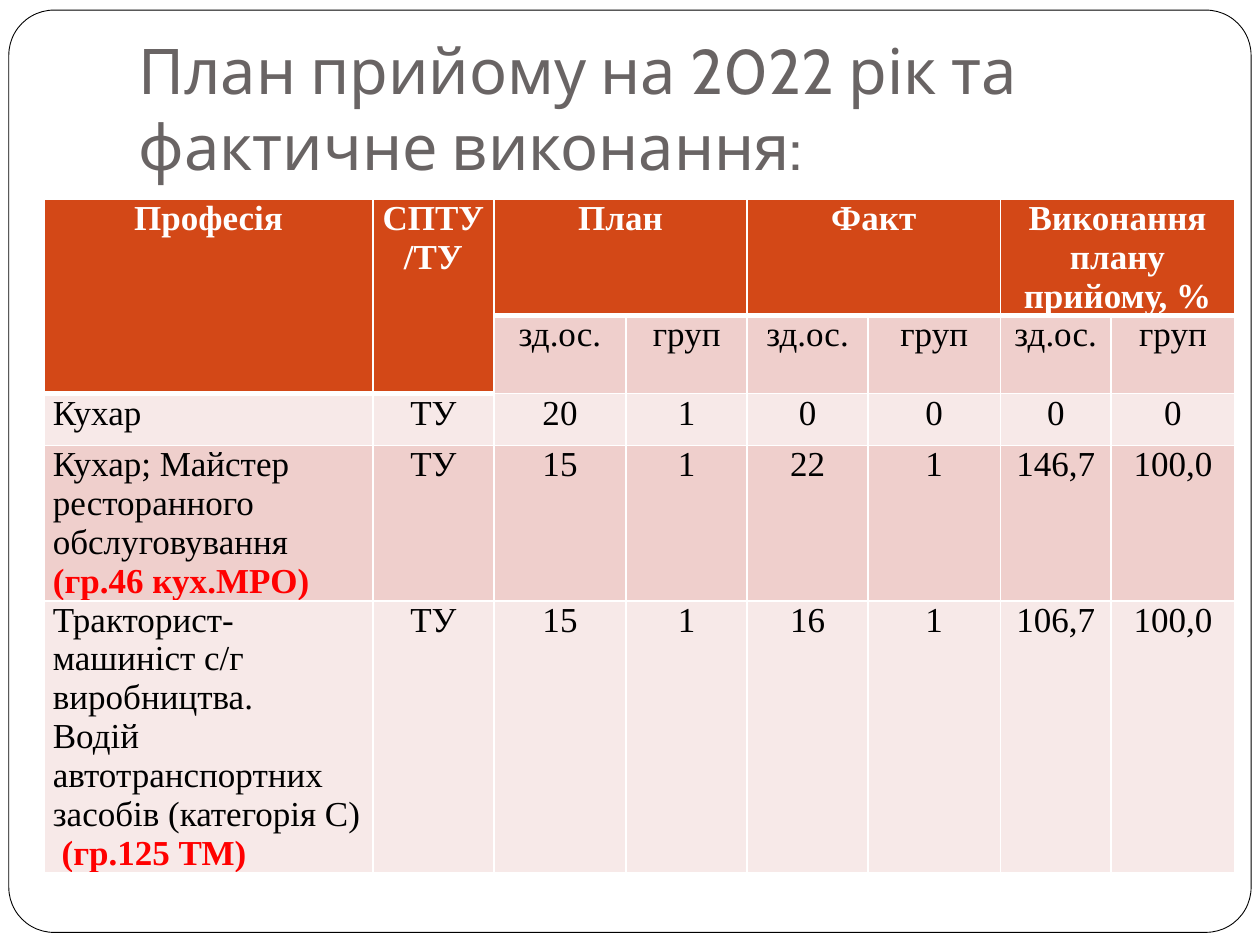
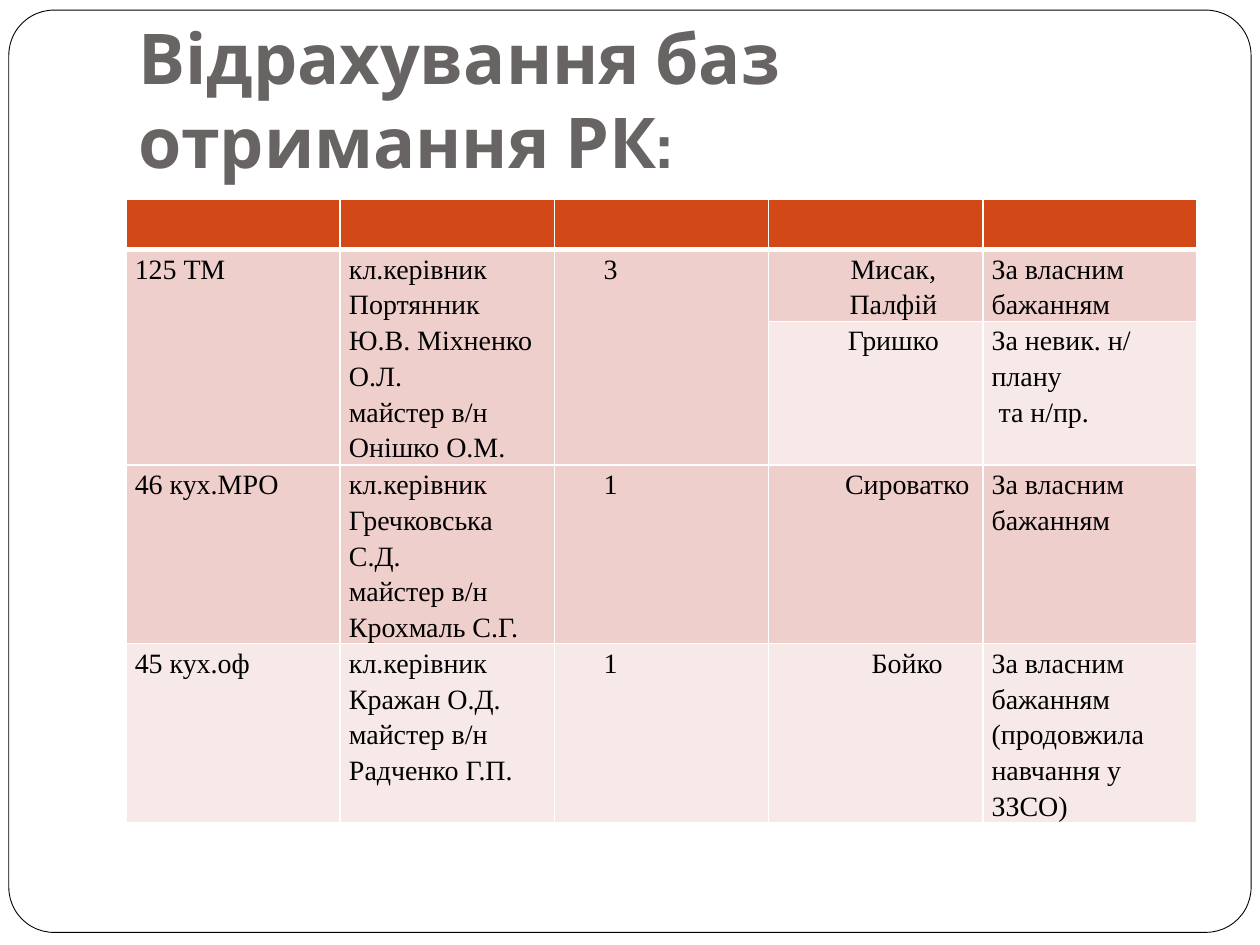
from lxml.etree import SubElement
from pptx import Presentation
from pptx.dml.color import RGBColor
from pptx.enum.shapes import MSO_SHAPE as Shape
from pptx.enum.text import MSO_ANCHOR as Anchor, MSO_AUTO_SIZE as AutoSize, PP_ALIGN as Align
from pptx.oxml.ns import qn
from pptx.util import Inches, Pt

COLORS = {
    "white": "FFFFFF", "black": "000000", "title": "696464", "header": "D34817",
    "band_dark": "EFCFCC", "band_light": "F7E9E8", "group": "FF0000",
}
TITLE_FONT, TABLE_FONT = "Cabin", "Times New Roman"
TITLE_BOX = (1, 0.3, 8.5, 1.25)
FRAME_BOX = (0.07, 0.08, 9.86, 7.32)
TITLE_ONLY = 5
GROUP_MARK = "*"

PLAN_TITLE = "План прийому на 2022 рік та фактичне виконання:"
PLAN_COLUMNS = [2.61, 0.96, 1.05, 0.96, 0.96, 1.05, 0.88, 0.98]
PLAN_HEIGHTS = [0.92, 0.62, 0.41, 1.23, 2.16]
PLAN_MERGES = [((0, 0), (1, 0)), ((0, 1), (1, 1)),
               ((0, 2), (0, 3)), ((0, 4), (0, 5)), ((0, 6), (0, 7))]
PLAN_ROWS = [
    ["Професія", "СПТУ/ТУ", "План", "", "Факт", "", "Виконання плану прийому, %", ""],
    ["", ""] + ["зд.ос.", "груп"] * 3,
    ["Кухар", "ТУ", "20", "1", "0", "0", "0", "0"],
    ["Кухар; Майстер ресторанного обслуговування\n*(гр.46 кух.МРО)",
     "ТУ", "15", "1", "22", "1", "146,7", "100,0"],
    ["Тракторист-машиніст с/г виробництва.\n"
     "Водій автотранспортних засобів (категорія С)\n* (гр.125 ТМ)",
     "ТУ", "15", "1", "16", "1", "106,7", "100,0"],
]

DISMISSAL_TITLE = "Відрахування баз отримання РК:"
DISMISSAL_COLUMNS = [1.7] * 5
DISMISSAL_HEIGHTS = [0.4, 0.57, 1.14, 1.42, 1.42]
DISMISSAL_MERGES = [((1, col), (2, col)) for col in range(3)]
DISMISSAL_ROWS = [
    [""] * 5,
    ["125 ТМ", "кл.керівник Портянник Ю.В. Міхненко О.Л.\nмайстер в/н Онішко О.М.",
     "3", "Мисак, Палфій", "За власним бажанням"],
    ["", "", "", "Гришко", "За невик. н/ плану\n та н/пр."],
    ["46 кух.МРО", "кл.керівник Гречковська С.Д.\nмайстер в/н Крохмаль С.Г.",
     "1", "Сироватко", "За власним бажанням"],
    ["45 кух.оф", "кл.керівник Кражан О.Д.\nмайстер в/н Радченко Г.П.",
     "1", "Бойко", "За власним бажанням (продовжила навчання у ЗЗСО)"],
]
COUNT_COLUMN, STUDENT_COLUMN = 2, 3
COUNT_INDENT = 0.32
STUDENT_INDENTS = {1: 0.28, 2: 0.28, 3: 0.5, 4: 0.5}


def rgb(name):
    return RGBColor.from_string(COLORS[name])


def write(frame, text, font=TABLE_FONT, size=20, color="black", bold=False,
          align=Align.LEFT, spacing=None, indent=0):
    """Write one paragraph per line; lines that start with GROUP_MARK stand out."""
    for index, line in enumerate(text.split("\n")):
        paragraph = frame.add_paragraph() if index else frame.paragraphs[0]
        paragraph.alignment = align
        if spacing:
            paragraph.line_spacing = spacing
        if indent:
            properties = paragraph._p.get_or_add_pPr()
            properties.set("marL", str(Inches(indent)))
            properties.set("indent", "0")
        marked = line.startswith(GROUP_MARK)
        run = paragraph.add_run()
        run.text = line.removeprefix(GROUP_MARK)
        run.font.name, run.font.size = font, Pt(size)
        run.font.bold = bold or marked
        run.font.color.rgb = rgb("group" if marked else color)


def set_borders(cell, widths):
    """Draw white borders; widths maps a side (L, R, T, B) to points."""
    properties = cell._tc.get_or_add_tcPr()
    for side, width in widths.items():
        line = SubElement(properties, qn(f"a:ln{side}"), w=str(Pt(width)))
        fill = SubElement(line, qn("a:solidFill"))
        SubElement(fill, qn("a:srgbClr"), val=COLORS["white"])


def style_cell(cell, color, widths):
    cell.margin_left = cell.margin_right = Inches(0.07)
    cell.margin_top = cell.margin_bottom = 0
    set_borders(cell, widths)
    cell.fill.solid()
    cell.fill.fore_color.rgb = rgb(color)


def add_banded_table(slide, left, top, columns, heights, rows, merges, text_format):
    """Add a table; text_format(row, col, is_header) gives the format of a cell's text."""
    table = slide.shapes.add_table(
        len(rows), len(columns), Inches(left), Inches(top),
        Inches(sum(columns)), Inches(sum(heights))).table
    for column, width in zip(table.columns, columns):
        column.width = Inches(width)
    for row, height in zip(table.rows, heights):
        row.height = Inches(height)
    for first, last in merges:
        table.cell(*first).merge(table.cell(*last))
    header_cells = {(0, col) for col in range(len(columns))}
    header_cells |= {last for first, last in merges if first[0] == 0}
    for r, texts in enumerate(rows):
        for c, text in enumerate(texts):
            is_header = (r, c) in header_cells
            band = "band_dark" if r % 2 else "band_light"
            widths = {"L": 1, "R": 1}
            if r == 0:
                widths["T"] = 1
            widths["B"] = 3 if is_header else 1
            cell = table.cell(r, c)
            style_cell(cell, "header" if is_header else band, widths)
            if text:
                write(cell.text_frame, text, **text_format(r, c, is_header))


def plan_format(row, col, is_header):
    return {"size": 20, "bold": is_header,
            "color": "white" if is_header else "black",
            "align": Align.CENTER if is_header or col else Align.LEFT}


def dismissal_format(row, col, is_header):
    style = {"size": 16, "spacing": 1.15}
    if col == COUNT_COLUMN:
        style["indent"] = COUNT_INDENT
    elif col == STUDENT_COLUMN:
        style.update(indent=STUDENT_INDENTS[row], align=Align.CENTER)
    return style


def add_titled_slide(prs, title, size, bold=False):
    slide = prs.slides.add_slide(prs.slide_layouts[TITLE_ONLY])
    heading = slide.shapes.title
    heading.left, heading.top, heading.width, heading.height = map(Inches, TITLE_BOX)
    frame = heading.text_frame
    frame.word_wrap, frame.auto_size = True, AutoSize.NONE
    frame.vertical_anchor = Anchor.BOTTOM
    frame.margin_left = frame.margin_right = frame.margin_bottom = Inches(0.1)
    frame.margin_top = Inches(0.05)
    write(frame, title, font=TITLE_FONT, size=size, color="title", bold=bold)
    return slide


def add_master_frame(prs, slide):
    """Draw the rounded page frame and move it to the master, behind everything."""
    frame = slide.shapes.add_shape(Shape.ROUNDED_RECTANGLE, *map(Inches, FRAME_BOX))
    frame.adjustments[0] = 0.049
    frame.shadow.inherit = False
    frame.fill.solid()
    frame.fill.fore_color.rgb = rgb("white")
    frame.line.color.rgb = rgb("black")
    frame.line.width = Pt(0.5)
    prs.slide_master.shapes._spTree.insert(2, frame._element)


def add_plan_slide(prs):
    slide = add_titled_slide(prs, PLAN_TITLE, 36)
    add_banded_table(slide, 0.35, 1.58, PLAN_COLUMNS, PLAN_HEIGHTS,
                     PLAN_ROWS, PLAN_MERGES, plan_format)
    return slide


def add_dismissal_slide(prs):
    slide = add_titled_slide(prs, DISMISSAL_TITLE, 40, bold=True)
    add_banded_table(slide, 1, 1.58, DISMISSAL_COLUMNS, DISMISSAL_HEIGHTS,
                     DISMISSAL_ROWS, DISMISSAL_MERGES, dismissal_format)


def main():
    prs = Presentation()
    prs.slide_width, prs.slide_height = Inches(10), Inches(7.5)
    plan_slide = add_plan_slide(prs)
    add_master_frame(prs, plan_slide)
    add_dismissal_slide(prs)
    prs.save("out.pptx")


if __name__ == "__main__":
    main()
